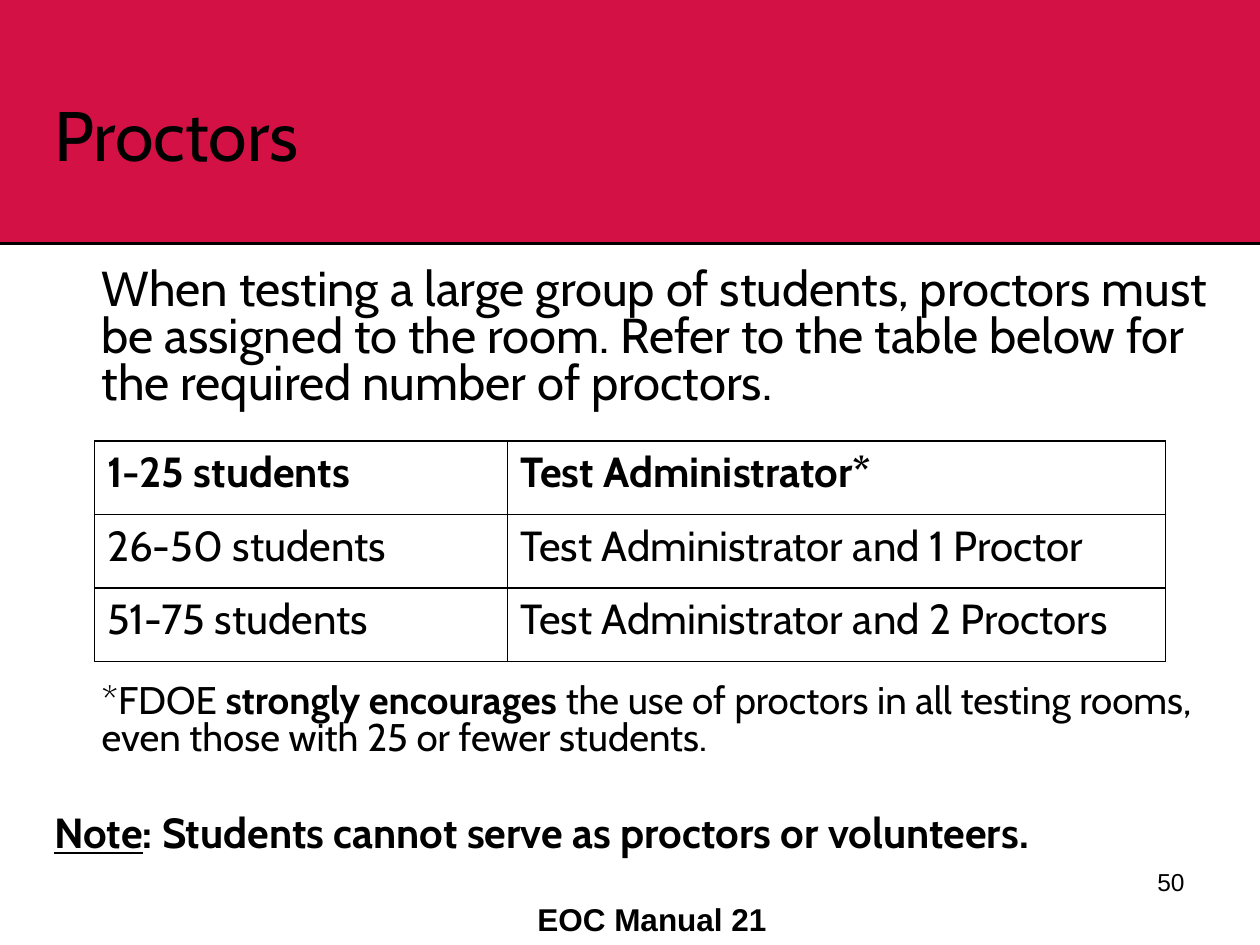
"""Build the slide on the required number of test proctors."""
from dataclasses import dataclass

from lxml.etree import SubElement
from pptx import Presentation
from pptx.dml.color import RGBColor
from pptx.enum.shapes import MSO_CONNECTOR as Conn, MSO_SHAPE as Shape
from pptx.enum.text import MSO_ANCHOR as Anchor, MSO_AUTO_SIZE as AutoSize, PP_ALIGN as Align
from pptx.oxml.ns import qn
from pptx.util import Pt


@dataclass(frozen=True)
class Theme:
    ink: RGBColor = RGBColor(0, 0, 0)
    band: RGBColor = RGBColor(0xD3, 0x11, 0x45)
    font: str = "Cabin"
    footer_font: str = "Arial"
    title: float = 40
    lead: float = 28
    table: float = 24
    footnote: float = 22
    note: float = 24
    footer: float = 18
    number: float = 14


THEME = Theme()


@dataclass(frozen=True)
class Run:
    text: str
    size: float
    bold: bool = False
    underline: bool = False
    font: str = THEME.font


@dataclass(frozen=True)
class Para:
    runs: tuple[Run, ...]
    left: float = 0
    before: float = 0
    spacing: float = 1.0
    align: Align = Align.LEFT


@dataclass(frozen=True)
class Box:
    left: float
    top: float
    width: float
    height: float
    paras: tuple[Para, ...]
    anchor: Anchor = Anchor.TOP
    wrap: bool = True


def fill_para(p, para: Para) -> None:
    p.alignment = para.align
    p.line_spacing = para.spacing
    p.space_before = Pt(para.before)
    p._p.get_or_add_pPr().set("marL", str(Pt(para.left)))
    for run in para.runs:
        r = p.add_run()
        r.text = run.text
        r.font.name = run.font
        r.font.size = Pt(run.size)
        r.font.bold = run.bold
        r.font.underline = run.underline
        r.font.color.rgb = THEME.ink


def add_box(s, box: Box) -> None:
    sp = s.shapes.add_textbox(Pt(box.left), Pt(box.top), Pt(box.width), Pt(box.height))
    tf = sp.text_frame
    tf.word_wrap = box.wrap
    tf.auto_size = AutoSize.NONE if box.wrap else AutoSize.SHAPE_TO_FIT_TEXT
    tf.vertical_anchor = box.anchor
    for i, para in enumerate(box.paras):
        fill_para(tf.add_paragraph() if i else tf.paragraphs[0], para)


def add_banner(s, width: float, height: float) -> None:
    rule = s.shapes.add_connector(Conn.STRAIGHT, Pt(0), Pt(height), Pt(width), Pt(height))
    rule.line.color.rgb = THEME.ink
    rule.line.width = Pt(4)
    SubElement(rule._element.spPr, qn("a:effectLst"))
    sp = s.shapes.add_shape(Shape.RECTANGLE, Pt(0), Pt(0), Pt(width), Pt(height))
    sp.shadow.inherit = False
    sp.fill.solid()
    sp.fill.fore_color.rgb = THEME.band
    sp.line.fill.background()


def add_borders(cell) -> None:
    tc_pr = cell._tc.get_or_add_tcPr()
    for i, side in enumerate(("lnL", "lnR", "lnT", "lnB")):
        ln = tc_pr.makeelement(qn(f"a:{side}"), {"w": str(Pt(1))})
        SubElement(SubElement(ln, qn("a:solidFill")), qn("a:srgbClr"), val=str(THEME.ink))
        tc_pr.insert(i, ln)


def add_staffing_table(s, rows: tuple[tuple[str, str], ...]) -> None:
    widths = (236, 376)
    height = 42
    table = s.shapes.add_table(
        len(rows), len(widths), Pt(54), Pt(252), Pt(sum(widths)), Pt(height * len(rows))
    ).table
    table.first_row = table.horz_banding = False
    for col, width in zip(table.columns, widths):
        col.width = Pt(width)
    for i, texts in enumerate(rows):
        table.rows[i].height = Pt(height)
        for j, text in enumerate(texts):
            cell = table.cell(i, j)
            cell.fill.background()
            add_borders(cell)
            run = Run(text, THEME.table, bold=i == 0)
            fill_para(cell.text_frame.paragraphs[0], Para((run,)))


def main() -> None:
    prs = Presentation()
    prs.slide_width, prs.slide_height = Pt(720), Pt(540)
    s = prs.slides.add_slide(prs.slide_layouts[6])
    add_banner(s, 720, 138.25)

    lead = Run(
        "When testing a large group of students, proctors must be assigned to the room. "
        "Refer to the table below for the required number of proctors.", THEME.lead)
    footnote = (
        Run("*FDOE ", THEME.footnote),
        Run("strongly encourages ", THEME.footnote, bold=True),
        Run("the use of proctors in all testing rooms, even those with 25 or fewer students.",
            THEME.footnote),
    )
    note = (
        Run("Note", THEME.note, bold=True, underline=True),
        Run(": Students cannot serve as proctors or volunteers.", THEME.note, bold=True),
    )
    title = Run("Proctors", THEME.title)
    number = Run("50", THEME.number, font=THEME.footer_font)
    footer = Run("EOC Manual 21", THEME.footer, bold=True, font=THEME.footer_font)
    boxes = (
        Box(24, 36, 648, 90, (Para((title,), spacing=0.8),), anchor=Anchor.MIDDLE),
        Box(516, 492, 168, 37.5, (Para((number,), align=Align.RIGHT),)),
        Box(24, 150, 684, 368.5, (
            Para((lead,), left=27, spacing=0.8),
            Para(footnote, left=27, before=157, spacing=0.8),
            Para(note, before=33, spacing=0.8),
        )),
        Box(300, 511, 147, 29, (Para((footer,)),), wrap=False),
    )
    for box in boxes:
        add_box(s, box)

    add_staffing_table(s, (
        ("1-25 students", "Test Administrator*"),
        ("26-50 students", "Test Administrator and 1 Proctor"),
        ("51-75 students", "Test Administrator and 2 Proctors"),
    ))
    prs.save("out.pptx")


if __name__ == "__main__":
    main()
